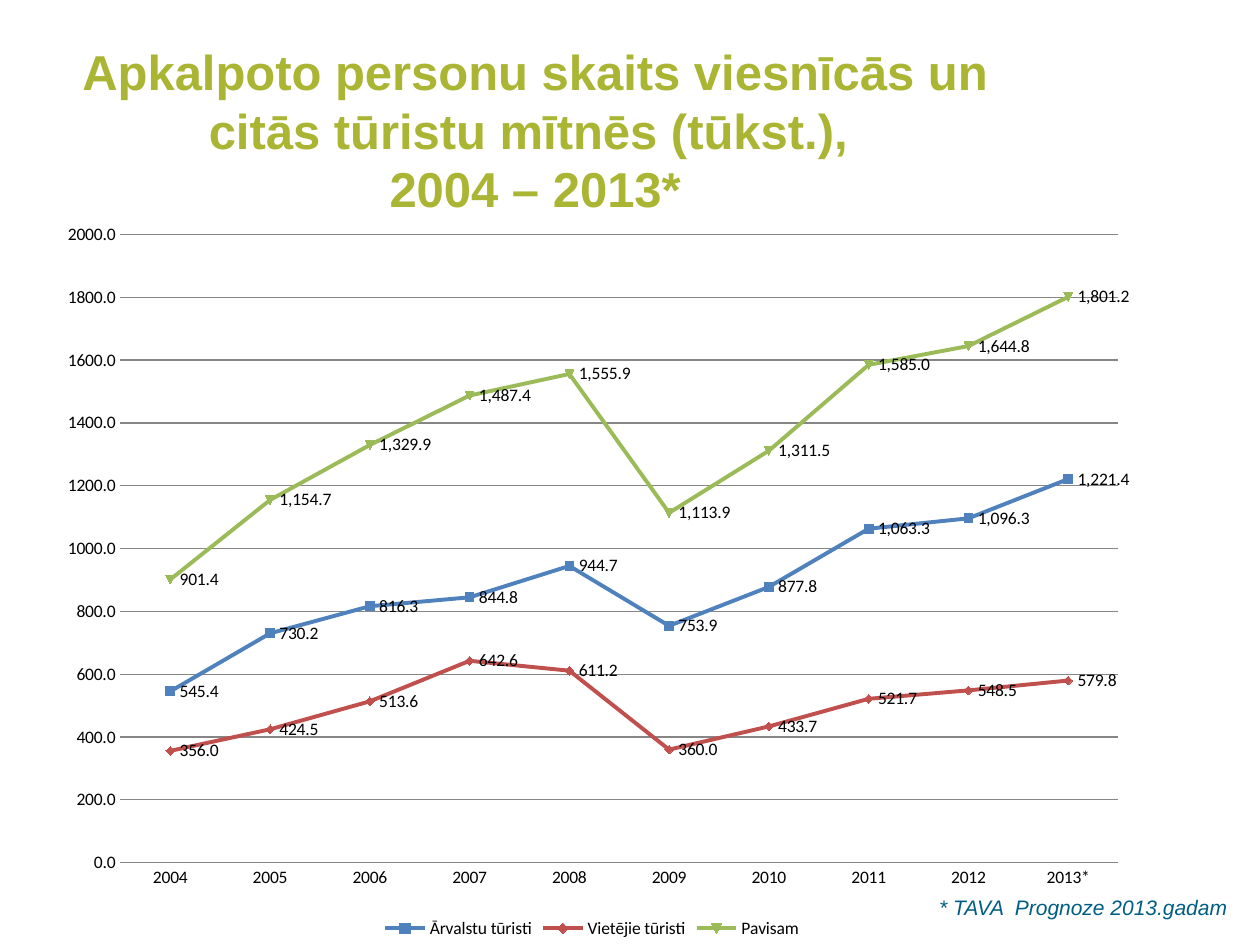
from dataclasses import dataclass

import lxml.etree
import pptx
import pptx.chart.data
import pptx.dml.color
import pptx.enum.chart
import pptx.enum.text
import pptx.oxml
import pptx.util

Pt = pptx.util.Pt
Align = pptx.enum.text.PP_ALIGN


@dataclass(frozen=True)
class Theme:
    text_font: str = "Arial"
    chart_font: str = "Calibri"
    title_color: str = "A9B533"
    note_color: str = "005D83"
    chart_text: str = "000000"
    grid_color: str = "868686"
    title_size: int = 28
    note_size: int = 12
    chart_size: int = 10
    line_width: float = 2.25
    grid_width: float = 0.75


THEME = Theme()
YEARS = [str(year) for year in range(2004, 2013)] + ["2013*"]
NUMBER_FORMAT = "#,##0.0"
SERIES = [
    ("Ārvalstu tūristi", "4F81BD",
     [545.4, 730.2, 816.3, 844.8, 944.7, 753.9, 877.8, 1063.3, 1096.3, 1221.4]),
    ("Vietējie tūristi", "C0504D",
     [356, 424.5, 513.6, 642.6, 611.2, 360, 433.7, 521.7, 548.5, 579.8]),
    ("Pavisam", "9BBB59",
     [901.4, 1154.7, 1329.9, 1487.4, 1555.9, 1113.9, 1311.5, 1585, 1644.8, 1801.2]),
]


def rgb(color):
    return pptx.dml.color.RGBColor.from_string(color)


def place(shape, left, top, width, height):
    shape.left, shape.top = Pt(left), Pt(top)
    shape.width, shape.height = Pt(width), Pt(height)


def write_text(shape, text, size, color, align, bold=False, italic=False):
    frame = shape.text_frame
    frame.text = text
    frame.word_wrap = True
    frame.auto_size = pptx.enum.text.MSO_AUTO_SIZE.SHAPE_TO_FIT_TEXT
    frame.vertical_anchor = pptx.enum.text.MSO_ANCHOR.TOP
    for paragraph in frame.paragraphs:
        paragraph.alignment = align
        paragraph.space_before = Pt(0)
        for run in paragraph.runs:
            font = run.font
            font.name, font.size = THEME.text_font, Pt(size)
            font.bold, font.italic = bold, italic
            font.color.rgb = rgb(color)


def style_line(line, color, width):
    line.color.rgb = rgb(color)
    line.width = Pt(width)


def style_series(series, color):
    series.smooth = False
    style_line(series.format.line, color, THEME.line_width)
    series.marker.format.fill.solid()
    series.marker.format.fill.fore_color.rgb = rgb(color)
    series.marker.format.line.color.rgb = rgb(color)
    labels = series.data_labels
    labels.show_value = True
    labels.number_format = NUMBER_FORMAT
    labels.number_format_is_linked = False
    labels.position = pptx.enum.chart.XL_LABEL_POSITION.RIGHT


def style_axes(chart):
    for axis in (chart.category_axis, chart.value_axis):
        axis.major_tick_mark = pptx.enum.chart.XL_TICK_MARK.NONE
        axis.minor_tick_mark = pptx.enum.chart.XL_TICK_MARK.NONE
    style_line(chart.category_axis.format.line, THEME.grid_color, THEME.grid_width)
    value_axis = chart.value_axis
    value_axis.minimum_scale, value_axis.maximum_scale = 0, 2000
    value_axis.major_unit = 200
    value_axis.format.line.fill.background()
    value_axis.has_major_gridlines = True
    style_line(value_axis.major_gridlines.format.line, THEME.grid_color, THEME.grid_width)
    value_axis.tick_labels.number_format = "0.0"
    value_axis.tick_labels.number_format_is_linked = False


def set_plot_layout(chart, **fractions):
    namespace = pptx.oxml.ns.qn
    plot_area = chart.element.find(".//" + namespace("c:plotArea"))
    layout = plot_area.find(namespace("c:layout"))
    if layout is None:
        layout = lxml.etree.Element(namespace("c:layout"))
        plot_area.insert(0, layout)
    manual = lxml.etree.SubElement(layout, namespace("c:manualLayout"))
    settings = {"layoutTarget": "inner", "xMode": "edge", "yMode": "edge", **fractions}
    for name, value in settings.items():
        lxml.etree.SubElement(manual, namespace("c:" + name)).set("val", str(value))


def add_line_chart(slide, left, top, width, height):
    data = pptx.chart.data.CategoryChartData(number_format=NUMBER_FORMAT)
    data.categories = YEARS
    for name, _, values in SERIES:
        data.add_series(name, values)
    chart = slide.shapes.add_chart(
        pptx.enum.chart.XL_CHART_TYPE.LINE_MARKERS,
        Pt(left), Pt(top), Pt(width), Pt(height), data).chart
    chart.has_title = False
    chart.font.name = THEME.chart_font
    chart.font.size = Pt(THEME.chart_size)
    chart.font.color.rgb = rgb(THEME.chart_text)
    chart.has_legend = True
    chart.legend.position = pptx.enum.chart.XL_LEGEND_POSITION.BOTTOM
    chart.legend.include_in_layout = False
    chart.plots[0].vary_by_categories = False
    for series, (_, color, _) in zip(chart.plots[0].series, SERIES):
        style_series(series, color)
    style_axes(chart)
    set_plot_layout(chart, x=0.07, y=0.03, w=0.91, h=0.86)


def main():
    presentation = pptx.Presentation()
    presentation.slide_width, presentation.slide_height = Pt(720), Pt(540)
    slide = presentation.slides.add_slide(presentation.slide_layouts[5])
    add_line_chart(slide, 25, 121.5, 626.5, 417.5)
    title = slide.shapes.title
    place(title, 19.5, 20, 572.5, 109.5)
    write_text(title, "Apkalpoto personu skaits viesnīcās un citās tūristu mītnēs (tūkst.), \n2004 – 2013*",
               THEME.title_size, THEME.title_color, Align.CENTER, bold=True)
    note = slide.shapes.add_textbox(Pt(502), Pt(507.5), Pt(206.5), Pt(21.5))
    write_text(note, "* TAVA  Prognoze 2013.gadam",
               THEME.note_size, THEME.note_color, Align.RIGHT, italic=True)
    presentation.save("out.pptx")


if __name__ == "__main__":
    main()
